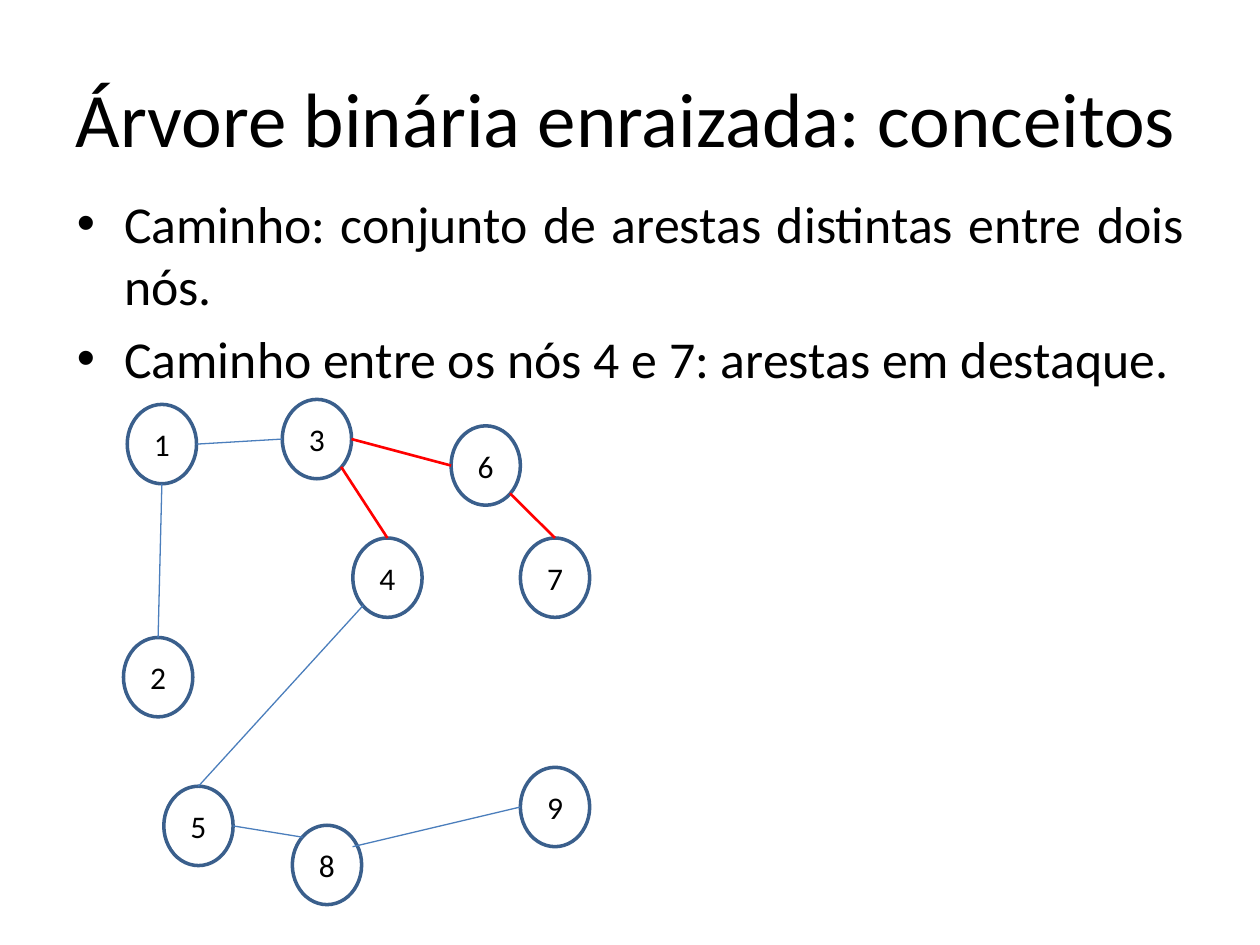
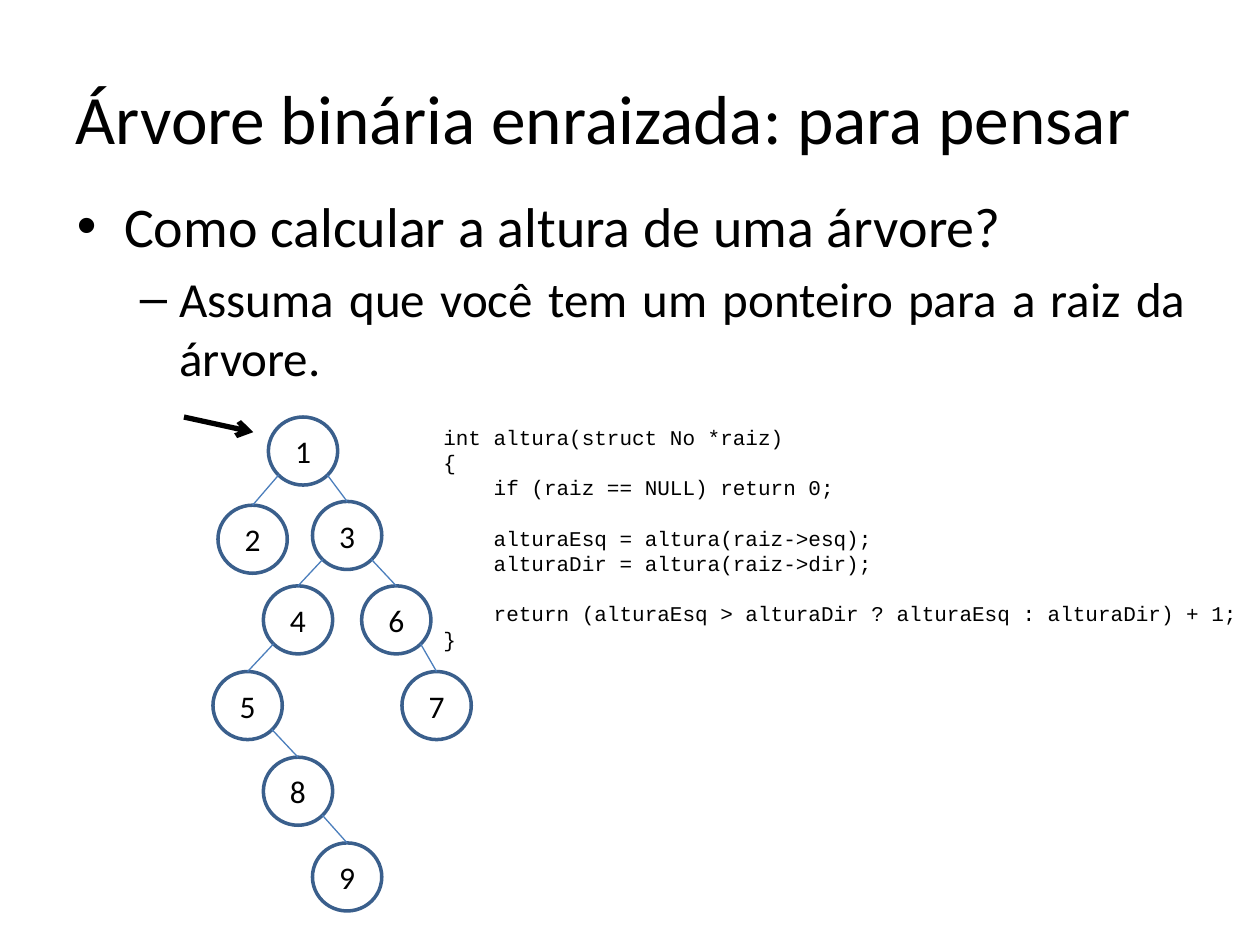
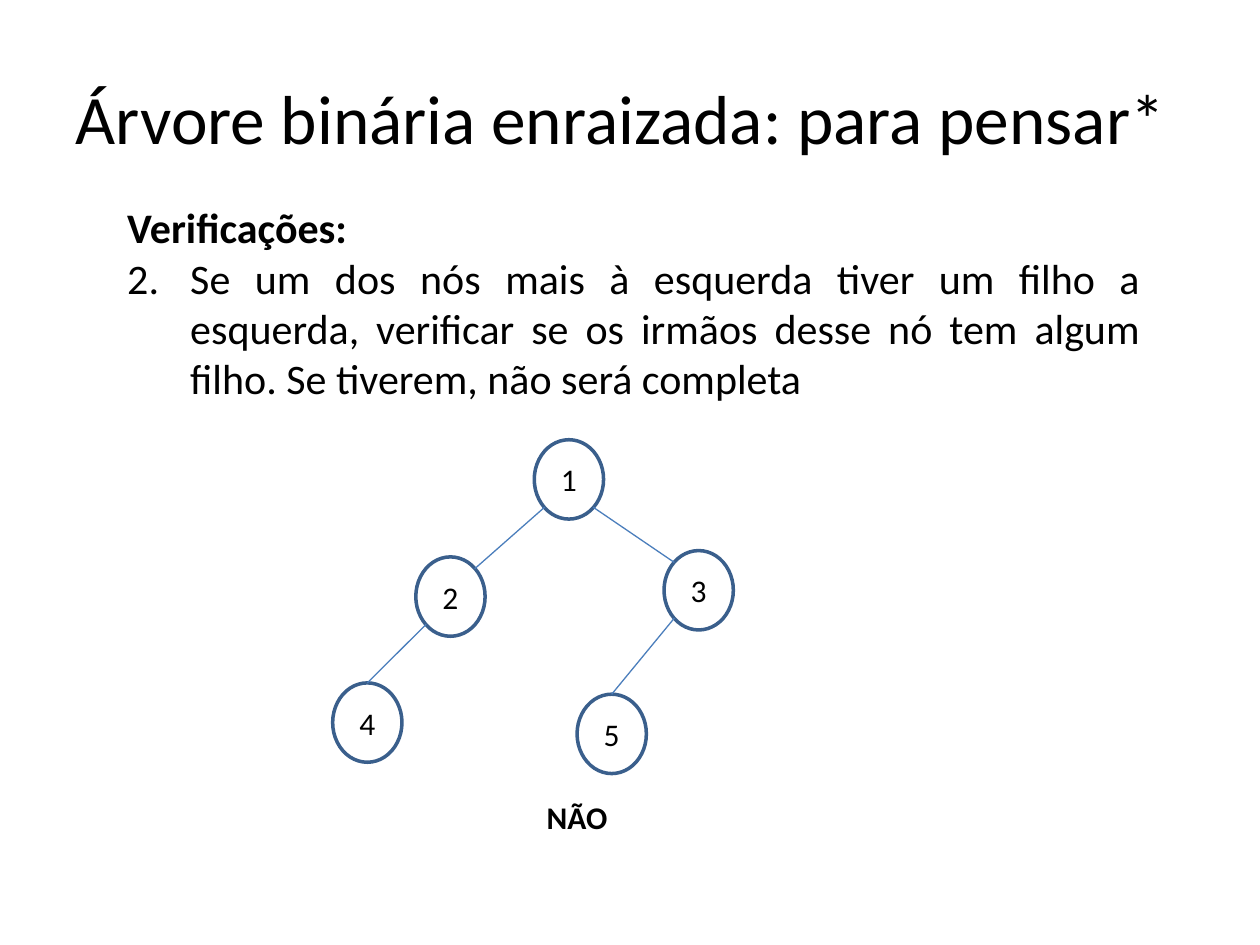
from lxml.etree import SubElement
from pptx import Presentation
from pptx.dml.color import RGBColor
from pptx.enum.shapes import MSO_CONNECTOR, MSO_SHAPE
from pptx.enum.text import MSO_ANCHOR, MSO_AUTO_SIZE, PP_ALIGN
from pptx.oxml.ns import qn
from pptx.util import Inches, Pt

BLACK = RGBColor(0x00, 0x00, 0x00)
NODE_BLUE = RGBColor(0x3A, 0x5F, 0x8C)
EDGE_BLUE = RGBColor(0x4B, 0x7E, 0xBC)
RED = RGBColor(0xFF, 0x00, 0x00)

BODY_FONT = "Calibri"
CODE_FONT = "Courier New"
NODE_WIDTH = 0.55
CODE_LINE = Pt(14.4)

TOP = (0.5, 0)
BOTTOM = (0.5, 1)
LEFT = (0, 0.5)
RIGHT = (1, 0.5)
TOP_LEFT = (0.15, 0.15)
TOP_RIGHT = (0.85, 0.15)
BOTTOM_LEFT = (0.15, 0.85)
BOTTOM_RIGHT = (0.85, 0.85)
INNER_RIGHT = (0.87, 0.27)

PATH_NODES = {
    1: (1.01, 3.21), 2: (0.98, 5.06), 3: (2.24, 3.17),
    4: (2.8, 4.27), 5: (1.3, 6.24), 6: (3.58, 3.38),
    7: (4.13, 4.27), 8: (2.32, 6.55), 9: (4.13, 6.09),
}
PATH_EDGES = [
    (1, RIGHT, 3, LEFT), (1, BOTTOM, 2, TOP), (4, BOTTOM_LEFT, 5, TOP),
    (5, RIGHT, 8, TOP_LEFT), (9, LEFT, 8, INNER_RIGHT),
]
HIGHLIGHTED_EDGES = [
    (3, BOTTOM_RIGHT, 4, TOP), (3, RIGHT, 6, LEFT), (6, BOTTOM_RIGHT, 7, TOP),
]
HEIGHT_NODES = {
    1: (2.13, 3.31), 2: (1.73, 4.01), 3: (2.48, 3.98),
    4: (2.09, 4.65), 5: (1.69, 5.33), 6: (2.87, 4.65),
    7: (3.19, 5.33), 8: (2.09, 6.01), 9: (2.48, 6.69),
}
HEIGHT_EDGES = [
    (1, BOTTOM_LEFT, 2, TOP), (1, BOTTOM_RIGHT, 3, TOP),
    (3, BOTTOM_LEFT, 4, TOP), (3, BOTTOM_RIGHT, 6, TOP),
    (4, BOTTOM_LEFT, 5, TOP), (6, BOTTOM_RIGHT, 7, TOP),
    (5, BOTTOM_RIGHT, 8, TOP), (8, BOTTOM_RIGHT, 9, TOP),
]
CHECK_NODES = {
    1: (4.24, 3.49), 2: (3.3, 4.42), 3: (5.27, 4.37),
    4: (2.64, 5.42), 5: (4.58, 5.51),
}
CHECK_EDGES = [
    (1, BOTTOM_LEFT, 2, TOP_RIGHT), (1, BOTTOM_RIGHT, 3, TOP_LEFT),
    (2, BOTTOM_LEFT, 4, TOP), (3, BOTTOM_LEFT, 5, TOP),
]
CODE_LINES = [
    ("int altura(struct No *raiz)", 0, 0),
    ("{", 0, 0),
    ("if (raiz == NULL) return 0;", 0.4, 0),
    ("alturaEsq = altura(raiz->esq);", 0.4, CODE_LINE),
    ("alturaDir = altura(raiz->dir);", 0.4, 0),
    ("return (alturaEsq > alturaDir ? alturaEsq : alturaDir) + 1;", 0.4, CODE_LINE),
    ("}", 0, 0),
]


def write_paragraph(frame, text, *, size, font=BODY_FONT, bold=False, align=PP_ALIGN.LEFT,
                    level=0, space_before=None, line_spacing=None):
    """Write text into the frame's first empty paragraph or a new one, and return it."""
    paragraph = frame.paragraphs[-1]
    if paragraph.runs:
        paragraph = frame.add_paragraph()
    paragraph.alignment = align
    paragraph.level = level
    if space_before is not None:
        paragraph.space_before = space_before
    if line_spacing is not None:
        paragraph.line_spacing = line_spacing
    run = paragraph.add_run()
    run.text = text
    run.font.name = font
    run.font.size = Pt(size)
    run.font.bold = bold
    run.font.color.rgb = BLACK
    return paragraph


def set_indent(paragraph, margin, first_line=0):
    """Set the left margin and first-line indent of a paragraph in inches."""
    properties = paragraph._p.get_or_add_pPr()
    properties.set("marL", str(Inches(margin)))
    properties.set("indent", str(Inches(first_line)))
    return properties


def place(shape, left, top, width, height):
    """Move a placeholder to a position in inches and return its text frame."""
    shape.left, shape.top = Inches(left), Inches(top)
    shape.width, shape.height = Inches(width), Inches(height)
    frame = shape.text_frame
    frame.auto_size = MSO_AUTO_SIZE.NONE
    frame.word_wrap = True
    return frame


def add_slide(presentation, title, title_size, body_box):
    """Add a titled slide and return it with its body text frame."""
    slide = presentation.slides.add_slide(presentation.slide_layouts[1])
    title_frame = place(slide.shapes.title, 0.5, 0.3, 9, 1.25)
    title_frame.vertical_anchor = MSO_ANCHOR.MIDDLE
    write_paragraph(title_frame, title, size=title_size)
    return slide, place(slide.placeholders[1], *body_box)


def add_text_box(slide, left, top, width, height):
    """Add a wrapping text box and return its text frame."""
    box = slide.shapes.add_textbox(Inches(left), Inches(top), Inches(width), Inches(height))
    box.text_frame.word_wrap = True
    return box.text_frame


def add_node(slide, label, left, top, height):
    """Add an outlined tree node with a centred label."""
    node = slide.shapes.add_shape(MSO_SHAPE.OVAL, Inches(left), Inches(top),
                                  Inches(NODE_WIDTH), Inches(height))
    node.shadow.inherit = False
    node.fill.background()
    node.line.color.rgb = NODE_BLUE
    node.line.width = Pt(2)
    node.text_frame.vertical_anchor = MSO_ANCHOR.MIDDLE
    write_paragraph(node.text_frame, str(label), size=18, align=PP_ALIGN.CENTER)
    return node


def add_line(slide, start, end, color, width):
    """Add a straight line between two points."""
    line = slide.shapes.add_connector(MSO_CONNECTOR.STRAIGHT, *start, *end)
    line.line.color.rgb = color
    line.line.width = Pt(width)
    SubElement(line._element.spPr, qn("a:effectLst"))
    return line


def site_point(node, site):
    """Return the point at a fractional position inside a node's box."""
    across, down = site
    return int(node.left + across * node.width), int(node.top + down * node.height)


def add_nodes(slide, positions, height=0.63):
    """Add all nodes of a tree and return them by label."""
    return {label: add_node(slide, label, left, top, height)
            for label, (left, top) in positions.items()}


def add_edges(slide, nodes, edges, color=EDGE_BLUE, width=0.75):
    """Draw tree edges, joining those that end at the top of a node."""
    for first, first_site, second, second_site in edges:
        edge = add_line(slide, site_point(nodes[first], first_site),
                        site_point(nodes[second], second_site), color, width)
        if second_site == TOP:
            edge.end_connect(nodes[second], 0)


def build_path_slide(presentation):
    """Build the slide on the path between two nodes."""
    slide, body = add_slide(presentation, "Árvore binária enraizada: conceitos", 44,
                            (0.51, 1.47, 9, 1.65))
    for text in ("Caminho: conjunto de arestas distintas entre dois nós.",
                 "Caminho entre os nós 4 e 7: arestas em destaque."):
        write_paragraph(body, text, size=29.6, align=PP_ALIGN.JUSTIFY)
    nodes = add_nodes(slide, PATH_NODES)
    add_edges(slide, nodes, PATH_EDGES)
    add_edges(slide, nodes, HIGHLIGHTED_EDGES, color=RED, width=1.5)


def build_height_slide(presentation):
    """Build the slide on computing the height of a tree."""
    slide, body = add_slide(presentation, "Árvore binária enraizada: para pensar", 39.6,
                            (0.51, 1.47, 9, 5.81))
    write_paragraph(body, "Como calcular a altura de uma árvore?", size=32,
                    align=PP_ALIGN.JUSTIFY)
    write_paragraph(body, "Assuma que você tem um ponteiro para a raiz da árvore.", size=28,
                    align=PP_ALIGN.JUSTIFY, level=1)
    nodes = add_nodes(slide, HEIGHT_NODES, height=0.54)
    add_edges(slide, nodes, HEIGHT_EDGES)
    pointer = add_line(slide, (Inches(1.46), Inches(3.31)), (Inches(2.01), Inches(3.43)),
                       BLACK, 3)
    SubElement(pointer.line._get_or_add_ln(), qn("a:tailEnd"), type="arrow")
    code = add_text_box(slide, 3.42, 3.32, 6.56, 1.92)
    for text, margin, space_before in CODE_LINES:
        paragraph = write_paragraph(code, text, size=12, font=CODE_FONT,
                                    space_before=space_before, line_spacing=CODE_LINE)
        set_indent(paragraph, margin)


def build_check_slide(presentation):
    """Build the slide on checking whether a tree is complete."""
    slide, body = add_slide(presentation, "Árvore binária enraizada: para pensar*", 39.6,
                            (0.91, 1.55, 8.24, 1.8))
    heading = write_paragraph(body, "Verificações:", size=24, bold=True,
                              align=PP_ALIGN.JUSTIFY, space_before=0)
    SubElement(set_indent(heading, 0), qn("a:buNone"))
    check = write_paragraph(
        body, "Se um dos nós mais à esquerda tiver um filho a esquerda, verificar se os irmãos "
        "desse nó tem algum filho. Se tiverem, não será completa",
        size=24, align=PP_ALIGN.JUSTIFY, space_before=0)
    SubElement(set_indent(check, 0.5, -0.5), qn("a:buAutoNum"), type="arabicPeriod", startAt="2")
    nodes = add_nodes(slide, CHECK_NODES)
    add_edges(slide, nodes, CHECK_EDGES)
    verdict = add_text_box(slide, 3.5, 6.14, 2.16, 0.68)
    verdict.vertical_anchor = MSO_ANCHOR.MIDDLE
    write_paragraph(verdict, "NÃO", size=18, bold=True, align=PP_ALIGN.CENTER)


def main():
    """Build the three slides and save the presentation."""
    presentation = Presentation()
    presentation.slide_width = Inches(10)
    presentation.slide_height = Inches(7.5)
    build_path_slide(presentation)
    build_height_slide(presentation)
    build_check_slide(presentation)
    presentation.save("out.pptx")


if __name__ == "__main__":
    main()
